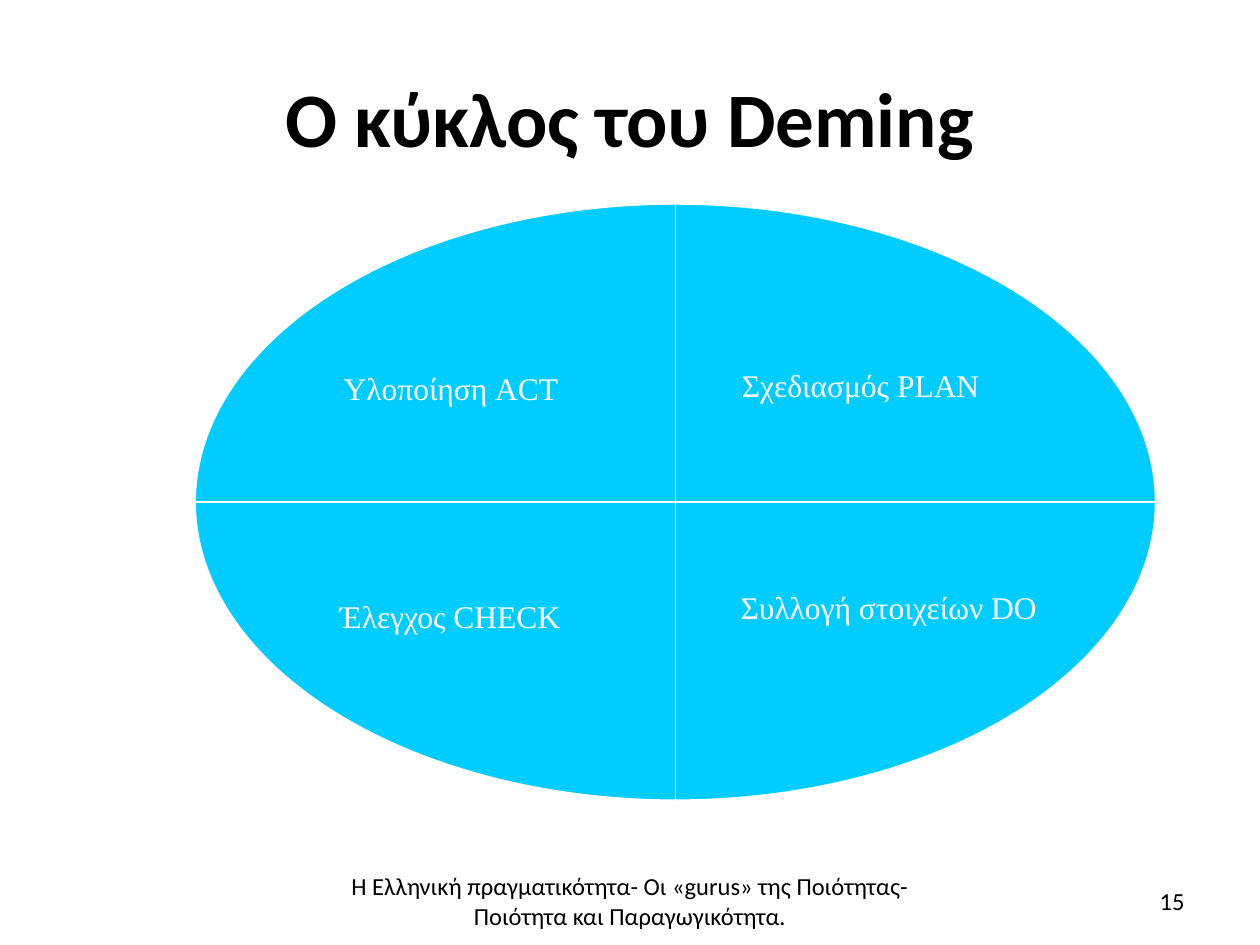
import pptx
import pptx.dml.color
import pptx.enum.shapes
import pptx.enum.text
import pptx.oxml.ns
import pptx.util
from lxml import etree

WIDTH, HEIGHT = 10, 7.5
BLACK, WHITE, CYAN = "000000", "FFFFFF", "00CCFF"
ALIGN = pptx.enum.text.PP_ALIGN
ANCHOR = pptx.enum.text.MSO_ANCHOR

# Ellipse of the cycle: left, top, width, height
CYCLE = (1.55, 1.62, 7.62, 4.73)

# Quadrant labels: text, left, top, width
STAGES = [
    ("Υλοποίηση ACT", 2.63, 2.88, 2.24),
    ("Σχεδιασμός PLAN", 5.79, 2.86, 2.24),
    ("Έλεγχος CHECK", 2.6, 4.69, 2.24),
    ("Συλλογή στοιχείων DO", 5.78, 4.62, 2.93),
]
FOOTER = "Η Ελληνική πραγματικότητα- Οι «gurus» της Ποιότητας- Ποιότητα και Παραγωγικότητα."


def inches(*lengths):
    return [pptx.util.Inches(length) for length in lengths]


def color(hex_string):
    return pptx.dml.color.RGBColor.from_string(hex_string)


def style_line(line):
    line.color.rgb = color(WHITE)
    line.width = pptx.util.Pt(0.75)


def write(shape, text, size, font_name, hex_string, align, anchor, bold=False):
    frame = shape.text_frame
    frame.word_wrap = True
    frame.vertical_anchor = anchor
    frame.text = text
    paragraph = frame.paragraphs[0]
    paragraph.alignment = align
    font = paragraph.font
    font.name, font.size, font.bold = font_name, pptx.util.Pt(size), bold
    font.color.rgb = color(hex_string)
    return paragraph


def add_title(slide, text):
    title = slide.shapes.title
    title.left, title.top, title.width, title.height = inches(0.5, 0.3, WIDTH - 1, 1.25)
    write(title, text, 44, "Calibri", BLACK, ALIGN.CENTER, ANCHOR.MIDDLE, bold=True)


def add_ellipse(slide, box):
    ellipse = slide.shapes.add_shape(pptx.enum.shapes.MSO_SHAPE.OVAL, *inches(*box))
    ellipse.shadow.inherit = False
    ellipse.fill.solid()
    ellipse.fill.fore_color.rgb = color(CYAN)
    style_line(ellipse.line)


def add_divider(slide, *ends):
    divider = slide.shapes.add_connector(
        pptx.enum.shapes.MSO_CONNECTOR.STRAIGHT, *inches(*ends))
    style_line(divider.line)
    properties = divider.element.spPr
    etree.SubElement(properties, pptx.oxml.ns.qn("a:effectLst"))


def add_stage(slide, text, left, top, width):
    label = slide.shapes.add_textbox(*inches(left, top, width, 0.4))
    paragraph = write(label, text, 18, "Times New Roman", WHITE, ALIGN.LEFT, ANCHOR.TOP)
    paragraph.space_before = pptx.util.Pt(11.2)


def add_footer(slide, text, left, width, align):
    footer = slide.shapes.add_textbox(*inches(left, 6.95, width, 0.4))
    write(footer, text, 14, "Calibri", BLACK, align, ANCHOR.MIDDLE)


def main():
    presentation = pptx.Presentation()
    presentation.slide_width, presentation.slide_height = inches(WIDTH, HEIGHT)
    slide = presentation.slides.add_slide(presentation.slide_layouts[5])
    add_title(slide, "Ο κύκλος του Deming")

    # Cycle split into four quadrants
    left, top, width, height = CYCLE
    center_x, center_y = left + width / 2, top + height / 2
    add_ellipse(slide, CYCLE)
    add_divider(slide, center_x, top, center_x, top + height)
    add_divider(slide, left, center_y, left + width, center_y)
    for stage in STAGES:
        add_stage(slide, *stage)

    # Footer and slide number
    add_footer(slide, FOOTER, 2.65, 4.7, ALIGN.CENTER)
    add_footer(slide, "15", 7.17, 2.33, ALIGN.RIGHT)
    presentation.save("out.pptx")


if __name__ == "__main__":
    main()
